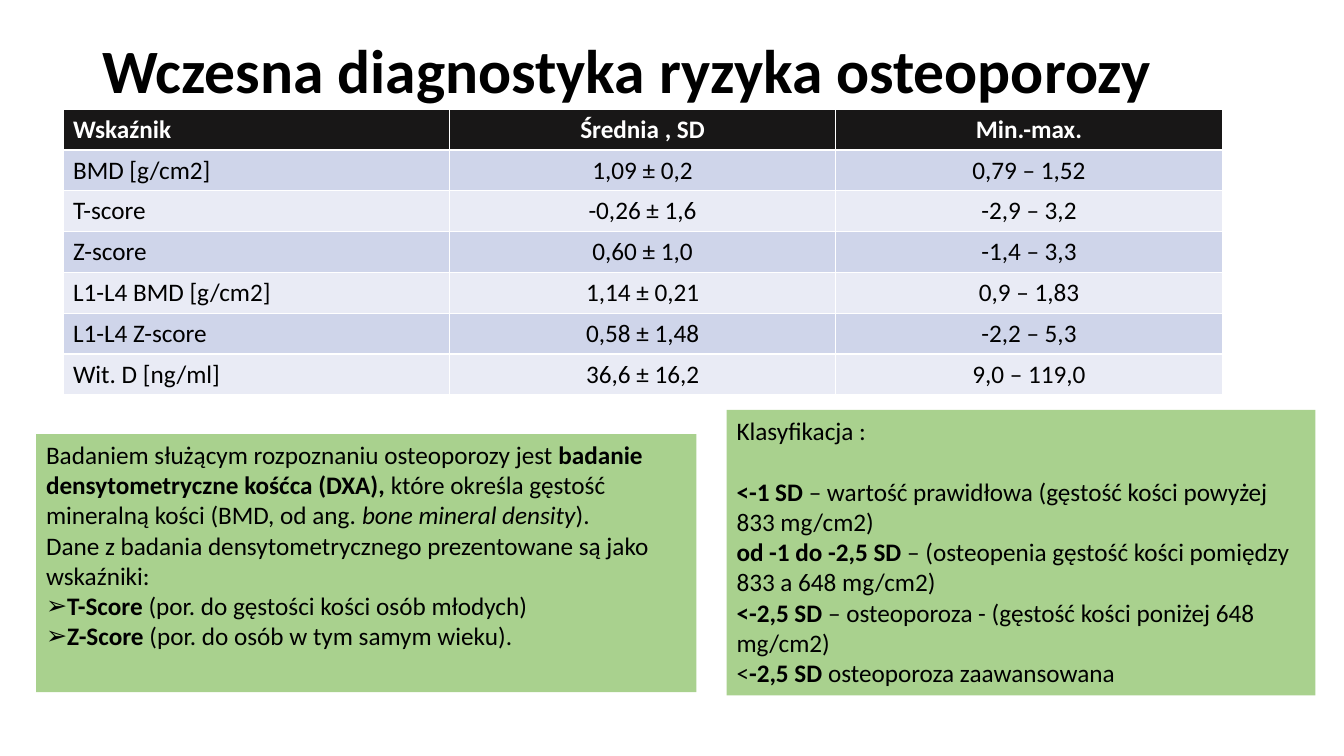
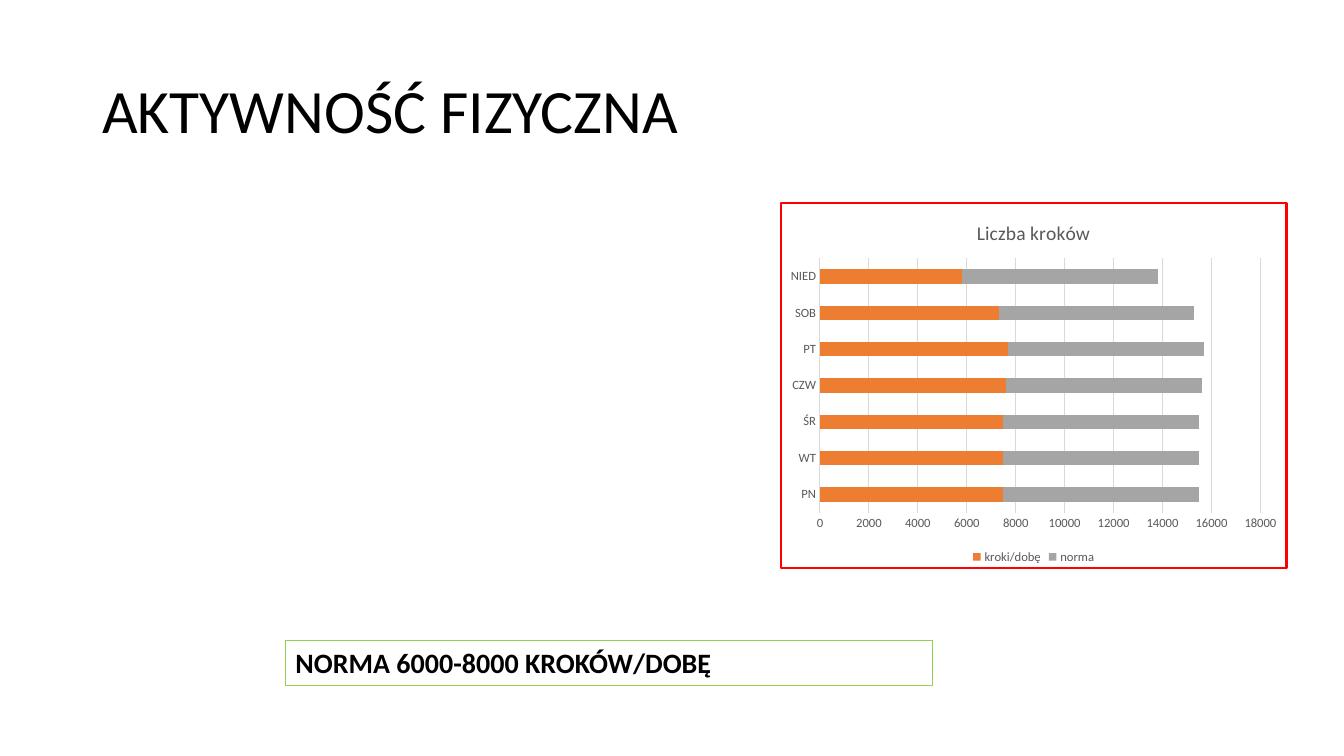
from lxml import etree
from pptx import Presentation, util as u
from pptx.chart.data import CategoryChartData
from pptx.dml.color import RGBColor
from pptx.enum import chart as ch, shapes, text
from pptx.oxml import parse_xml
from pptx.oxml.ns import nsdecls, qn

# Shared look
FONT = "Calibri"
BLACK = RGBColor(0x00, 0x00, 0x00)
WHITE = RGBColor(0xFF, 0xFF, 0xFF)
HEADER = RGBColor(0x18, 0x17, 0x17)
BAND_DARK = RGBColor(0xCF, 0xD5, 0xEA)
BAND_LIGHT = RGBColor(0xE9, 0xEB, 0xF5)
GREEN = RGBColor(0xA9, 0xD1, 0x8E)
LIME = RGBColor(0x92, 0xD0, 0x50)
ORANGE = RGBColor(0xED, 0x7D, 0x31)
GREY = RGBColor(0xA5, 0xA5, 0xA5)
LABEL = RGBColor(0x59, 0x59, 0x59)
GRID_LINE = RGBColor(0xD9, 0xD9, 0xD9)
RED = RGBColor(0xFF, 0x00, 0x00)

# Layout grid: 160 columns by 90 rows
WIDTH, HEIGHT = u.Inches(13.33), u.Inches(7.5)
COLUMNS, ROWS = 160, 90

INDICATORS = [
    ("Wskaźnik", "Średnia , SD", "Min.-max."),
    ("BMD [g/cm2]", "1,09 ± 0,2", "0,79 – 1,52"),
    ("T-score", "-0,26 ± 1,6", "-2,9 – 3,2"),
    ("Z-score", "0,60 ± 1,0", "-1,4 – 3,3"),
    ("L1-L4 BMD [g/cm2]", "1,14 ± 0,21", "0,9 – 1,83"),
    ("L1-L4 Z-score", "0,58 ± 1,48", "-2,2 – 5,3"),
    ("Wit. D [ng/ml]", "36,6 ± 16,2", "9,0 – 119,0"),
]

# Paragraphs are lists of runs: (text, style), style "b" bold or "i" italic
EXAMINATION = [
    [("Badaniem służącym rozpoznaniu osteoporozy jest ", ""),
     ("badanie densytometryczne kośćca (DXA), ", "b"),
     ("które określa gęstość mineralną kości (BMD, od ang. ", ""),
     ("bone mineral density", "i"), (").", "")],
    [("Dane z badania densytometrycznego prezentowane są jako wskaźniki:", "")],
]
SCORES = [
    [("T-Score ", "b"), ("(por. do gęstości kości osób młodych)", "")],
    [("Z-Score", "b"), (" (por. do osób w tym samym wieku).", "")],
]
CLASSES = [
    [("Klasyfikacja :", "")],
    [("<-1 SD ", "b"), ("– wartość prawidłowa (gęstość kości powyżej 833 mg/cm2)", "")],
    [("od -1 do -2,5 SD ", "b"),
     ("– (osteopenia gęstość kości pomiędzy 833 a 648 mg/cm2)", "")],
    [("<-2,5 SD ", "b"), ("– osteoporoza - (gęstość kości poniżej 648 mg/cm2)", "")],
    [("<", ""), ("-2,5 SD ", "b"), ("osteoporoza zaawansowana", "")],
]

DAYS = ["PN", "WT", "ŚR", "CZW", "PT", "SOB", "NIED"]
STEPS = [
    ("kroki/dobę", [7500, 7500, 7500, 7600, 7700, 7300, 5800], ORANGE),
    ("norma", [8000] * len(DAYS), GREY),
]


def grid_box(column, row, columns, rows):
    """Turn grid units into left, top, width and height."""
    return (int(WIDTH * column / COLUMNS), int(HEIGHT * row / ROWS),
            int(WIDTH * columns / COLUMNS), int(HEIGHT * rows / ROWS))


def style_font(font, size, color, bold=False, italic=False):
    font.name, font.size = FONT, u.Pt(size)
    font.bold, font.italic = bold, italic
    font.color.rgb = color


def add_runs(paragraph, runs, size, color=BLACK):
    for words, style in runs:
        run = paragraph.add_run()
        run.text = words
        style_font(run.font, size, color, style == "b", style == "i")


def add_title(slide, box, words, style=""):
    frame = slide.shapes.add_textbox(*box).text_frame
    frame.word_wrap = True
    frame.vertical_anchor = text.MSO_ANCHOR.MIDDLE
    frame.paragraphs[0].line_spacing = 0.9
    add_runs(frame.paragraphs[0], [(words, style)], 44)


def add_panel(slide, box, paragraphs, size, fill, border=None):
    """Filled rectangle with left-aligned text; returns its paragraphs."""
    panel = slide.shapes.add_shape(shapes.MSO_SHAPE.RECTANGLE, *box)
    panel.shadow.inherit = False
    panel.fill.solid()
    panel.fill.fore_color.rgb = fill
    if border is None:
        panel.line.fill.background()
    else:
        panel.line.color.rgb = border
        panel.line.width = u.Pt(0.75)
    frame = panel.text_frame
    frame.word_wrap = True
    frame.vertical_anchor = text.MSO_ANCHOR.TOP
    for index, runs in enumerate(paragraphs):
        paragraph = frame.add_paragraph() if index else frame.paragraphs[0]
        paragraph.alignment = text.PP_ALIGN.LEFT
        add_runs(paragraph, runs, size)
    return frame.paragraphs


def add_arrow_bullet(paragraph):
    properties = paragraph._p.get_or_add_pPr()
    indent = u.Inches(0.2)
    properties.set("marL", str(indent))
    properties.set("indent", str(-indent))
    etree.SubElement(properties, qn("a:buFont")).set("typeface", "Arial")
    etree.SubElement(properties, qn("a:buChar")).set("char", "➢")


def add_indicator_table(slide, box, records):
    table = slide.shapes.add_table(len(records), len(records[0]), *box).table
    for row, record in enumerate(records):
        header = row == 0
        band = HEADER if header else (BAND_DARK if row % 2 else BAND_LIGHT)
        for column, words in enumerate(record):
            cell = table.cell(row, column)
            cell.fill.solid()
            cell.fill.fore_color.rgb = band
            paragraph = cell.text_frame.paragraphs[0]
            paragraph.alignment = text.PP_ALIGN.CENTER if column else text.PP_ALIGN.LEFT
            add_runs(paragraph, [(words, "b" if header else "")], 18,
                     WHITE if header else BLACK)


def frame_chart(chart, color, points):
    """Fill the chart area white and outline it."""
    area = parse_xml(
        f'<c:spPr {nsdecls("c", "a")}>'
        f'<a:solidFill><a:srgbClr val="{WHITE}"/></a:solidFill>'
        f'<a:ln w="{u.Pt(points)}"><a:solidFill><a:srgbClr val="{color}"/></a:solidFill></a:ln>'
        '</c:spPr>')
    chart._chartSpace.find(qn("c:chart")).addnext(area)


def add_steps_chart(slide, box, title):
    data = CategoryChartData()
    data.categories = DAYS
    for name, values, _ in STEPS:
        data.add_series(name, values)
    chart = slide.shapes.add_chart(ch.XL_CHART_TYPE.BAR_STACKED, *box, data).chart
    style_font(chart.font, 10, BLACK)
    frame_chart(chart, RED, 1.75)

    # Title and legend
    heading = chart.chart_title.text_frame.paragraphs[0]
    add_runs(heading, [(title, "")], 14, LABEL)
    chart.has_legend = True
    chart.legend.position = ch.XL_LEGEND_POSITION.BOTTOM
    chart.legend.include_in_layout = False
    style_font(chart.legend.font, 9, LABEL)

    # Bars
    plot = chart.plots[0]
    plot.gap_width, plot.overlap = 150, 100
    plot.vary_by_categories = False
    for series, (_, _, color) in zip(plot.series, STEPS):
        series.format.fill.solid()
        series.format.fill.fore_color.rgb = color

    # Axes
    days, steps = chart.category_axis, chart.value_axis
    for axis in (days, steps):
        axis.major_tick_mark = axis.minor_tick_mark = ch.XL_TICK_MARK.NONE
        style_font(axis.tick_labels.font, 9, LABEL)
    steps.minimum_scale, steps.maximum_scale, steps.major_unit = 0, 18000, 2000
    steps.format.line.fill.background()
    steps.has_major_gridlines = True
    for line in (days.format.line, steps.major_gridlines.format.line):
        line.color.rgb = GRID_LINE
        line.width = u.Pt(0.75)


def build_diagnostics_slide(slide):
    add_title(slide, grid_box(11, 0, 138, 17.4),
              "Wczesna diagnostyka ryzyka osteoporozy", "b")
    add_indicator_table(slide, grid_box(7.5, 13, 138, 34), INDICATORS)
    examination = add_panel(slide, grid_box(4.3, 51.7, 78.6, 30.7),
                            EXAMINATION + SCORES, 18, GREEN)
    for score in examination[len(EXAMINATION):]:
        add_arrow_bullet(score)
    classes = add_panel(slide, grid_box(86.5, 48.8, 70.1, 34), CLASSES, 18, GREEN)
    classes[0].space_after = u.Pt(22)


def build_activity_slide(slide):
    add_title(slide, grid_box(11, 4.8, 138, 17.4), "AKTYWNOŚĆ FIZYCZNA")
    add_steps_chart(slide, grid_box(92.8, 24, 60.5, 43.8), "Liczba kroków")
    add_panel(slide, grid_box(34, 76.3, 77, 5.3),
              [[("NORMA 6000-8000 KROKÓW/DOBĘ", "b")]], 20, WHITE, LIME)


def main():
    deck = Presentation()
    deck.slide_width, deck.slide_height = WIDTH, HEIGHT
    blank = deck.slide_layouts[6]
    for build in (build_diagnostics_slide, build_activity_slide):
        build(deck.slides.add_slide(blank))
    deck.save("out.pptx")


if __name__ == "__main__":
    main()
